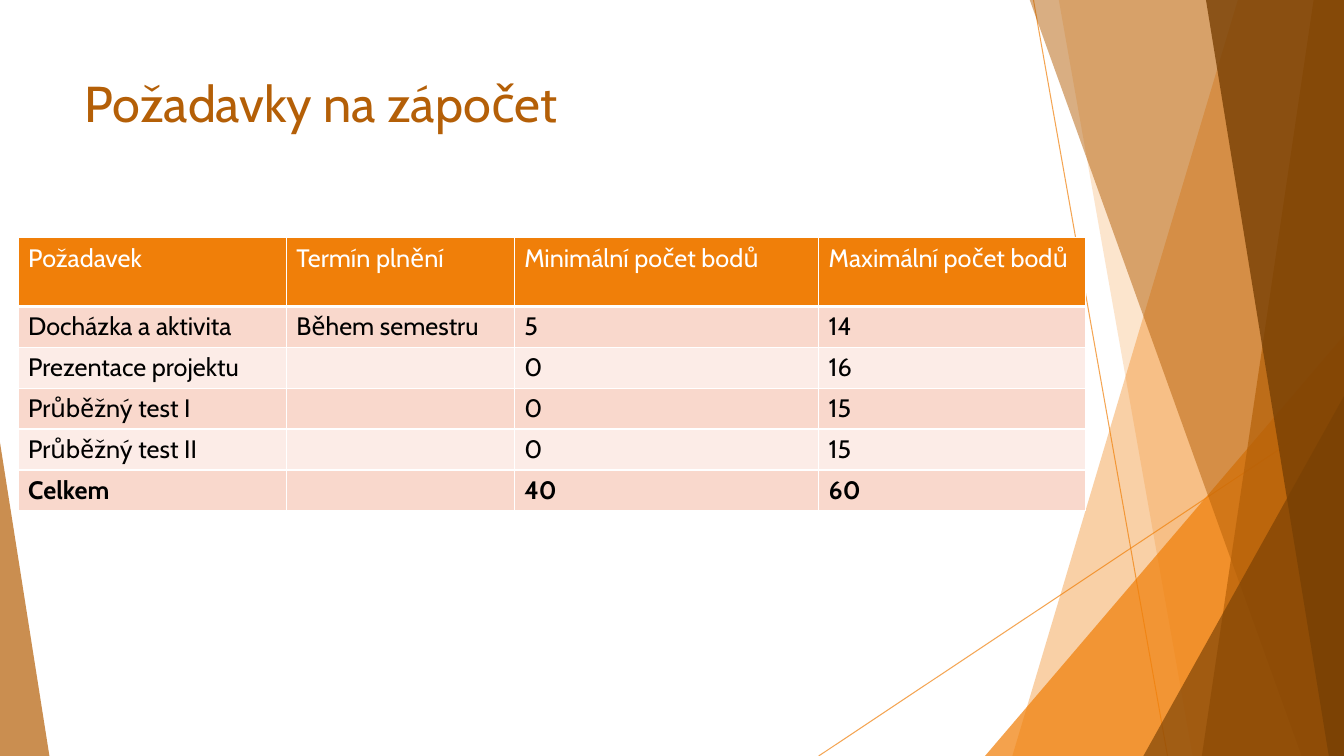
from pptx import Presentation
from pptx.dml.color import RGBColor
from pptx.enum.shapes import MSO_CONNECTOR, MSO_SHAPE
from pptx.enum.text import MSO_ANCHOR, PP_ALIGN
from pptx.oxml.ns import qn
from pptx.util import Inches, Pt
from lxml.etree import SubElement

FONT = "Cabin"
WIDE, HIGH = 13.33, 7.5
TOP = -0.01
COLORS = {
    "orange": "F07F09", "rust": "B45F07", "brown": "784004",
    "rose": "F9D8CC", "blush": "FCECE7", "white": "FFFFFF", "black": "000000",
}
COLS = [2.66, 2.26, 3.02, 2.65]
ROWS = [
    ["Požadavek", "Termín plnění", "Minimální počet bodů", "Maximální počet bodů"],
    ["Docházka a aktivita", "Během semestru", "5", "14"],
    ["Prezentace projektu", "", "0", "16"],
    ["Průběžný test I", "", "0", "15"],
    ["Průběžný test II", "", "0", "15"],
    ["Celkem", "", "40", "60"],
]
# Top left x, top right x, bottom left x, colour, opacity
LINES = [((10.25, 0), (11.58, HIGH)), ((WIDE, 4.03), (8.12, HIGH))]
BANDS_LOW = [(12.28, 10.04, "orange", 36), (10.5, 11.83, "orange", 20)]
BANDS_HIGH = [
    (10.21, 12.91, "rust", 50),
    (13.03, 11.92, "rust", 70),
    (11.96, 13.18, "brown", 80),
]


def rgb(name):
    return RGBColor.from_string(COLORS[name])


def fade(shape, alpha):
    """Set the opacity, in percent, of the shape's only colour."""
    color = next(shape._element.spPr.iter(qn("a:srgbClr")))
    SubElement(color, qn("a:alpha"), val=str(alpha * 1000))


def paint(shape, color, alpha):
    shape.shadow.inherit = False
    shape.line.fill.background()
    shape.fill.solid()
    shape.fill.fore_color.rgb = rgb(color)
    fade(shape, alpha)


def add_line(slide, start, end):
    points = [Inches(v) for v in (*start, *end)]
    line = slide.shapes.add_connector(MSO_CONNECTOR.STRAIGHT, *points)
    line.line.color.rgb = rgb("orange")
    line.line.width = Pt(0.75)
    fade(line, 70)
    SubElement(line._element.spPr, qn("a:effectLst"))


def add_band(slide, upper, lower, color, alpha):
    """Fill from a slanted left edge to the slide's right edge."""
    corners = [(upper, TOP), (WIDE, TOP), (WIDE, HIGH), (lower, HIGH)]
    points = [(Inches(x), Inches(y)) for x, y in corners]
    form = slide.shapes.build_freeform(*points[0])
    form.add_line_segments(points[1:], close=True)
    paint(form.convert_to_shape(), color, alpha)


def add_wedge(slide, left, top, width, tip, color, alpha):
    """Stand a triangle on the slide's bottom edge."""
    wedge = slide.shapes.add_shape(
        MSO_SHAPE.ISOSCELES_TRIANGLE,
        Inches(left), Inches(top), Inches(width), Inches(HIGH - top))
    wedge.adjustments[0] = tip
    paint(wedge, color, alpha)


def add_decor(slide):
    for start, end in LINES:
        add_line(slide, start, end)
    for band in BANDS_LOW:
        add_band(slide, *band)
    add_wedge(slide, 9.77, 3.33, 3.56, 1, "orange", 72)
    for band in BANDS_HIGH:
        add_band(slide, *band)
    add_wedge(slide, 11.34, 3.93, 1.99, 1, "brown", 66)
    add_wedge(slide, 0, 4.39, 0.49, 0, "rust", 70)


def style(font, size, color, bold=False):
    font.name = FONT
    font.size = Pt(size)
    font.bold = bold
    font.color.rgb = rgb(color)


def set_title(slide, text):
    title = slide.shapes.title
    title.left, title.top = Inches(0.74), Inches(0.67)
    title.width, title.height = Inches(9.4), Inches(1.44)
    frame = title.text_frame
    frame.text = text
    frame.vertical_anchor = MSO_ANCHOR.TOP
    frame.paragraphs[0].alignment = PP_ALIGN.LEFT
    style(frame.paragraphs[0].runs[0].font, 36, "rust")
    slide.shapes._spTree.append(title._element)


def add_edges(cell, base):
    props = cell._tc.get_or_add_tcPr()
    for side in "LRTB":
        width = base if side == "B" else 1
        edge = SubElement(props, qn(f"a:ln{side}"), w=str(Pt(width)))
        fill = SubElement(edge, qn("a:solidFill"))
        SubElement(fill, qn("a:srgbClr"), val=COLORS["white"])


def fill_cell(cell, text, row):
    head = row == 0
    add_edges(cell, 3 if head else 1)
    cell.fill.solid()
    cell.fill.fore_color.rgb = rgb(
        "orange" if head else "rose" if row % 2 else "blush")
    cell.text_frame.text = text
    for run in cell.text_frame.paragraphs[0].runs:
        style(run.font, 18, "white" if head else "black", row == len(ROWS) - 1)


def add_grid(slide):
    table = slide.shapes.add_table(
        len(ROWS), len(COLS), Inches(0.18), Inches(2.36),
        Inches(sum(COLS)), Inches(2.7)).table
    for col, width in zip(table.columns, COLS):
        col.width = Inches(width)
    for r, texts in enumerate(ROWS):
        table.rows[r].height = Inches(0.39 if r else 0.68)
        for c, text in enumerate(texts):
            fill_cell(table.cell(r, c), text, r)


def main():
    deck = Presentation()
    deck.slide_width, deck.slide_height = Inches(WIDE), Inches(HIGH)
    slide = deck.slides.add_slide(deck.slide_layouts[5])
    add_decor(slide)
    set_title(slide, "Požadavky na zápočet")
    add_grid(slide)
    deck.save("out.pptx")


if __name__ == "__main__":
    main()
